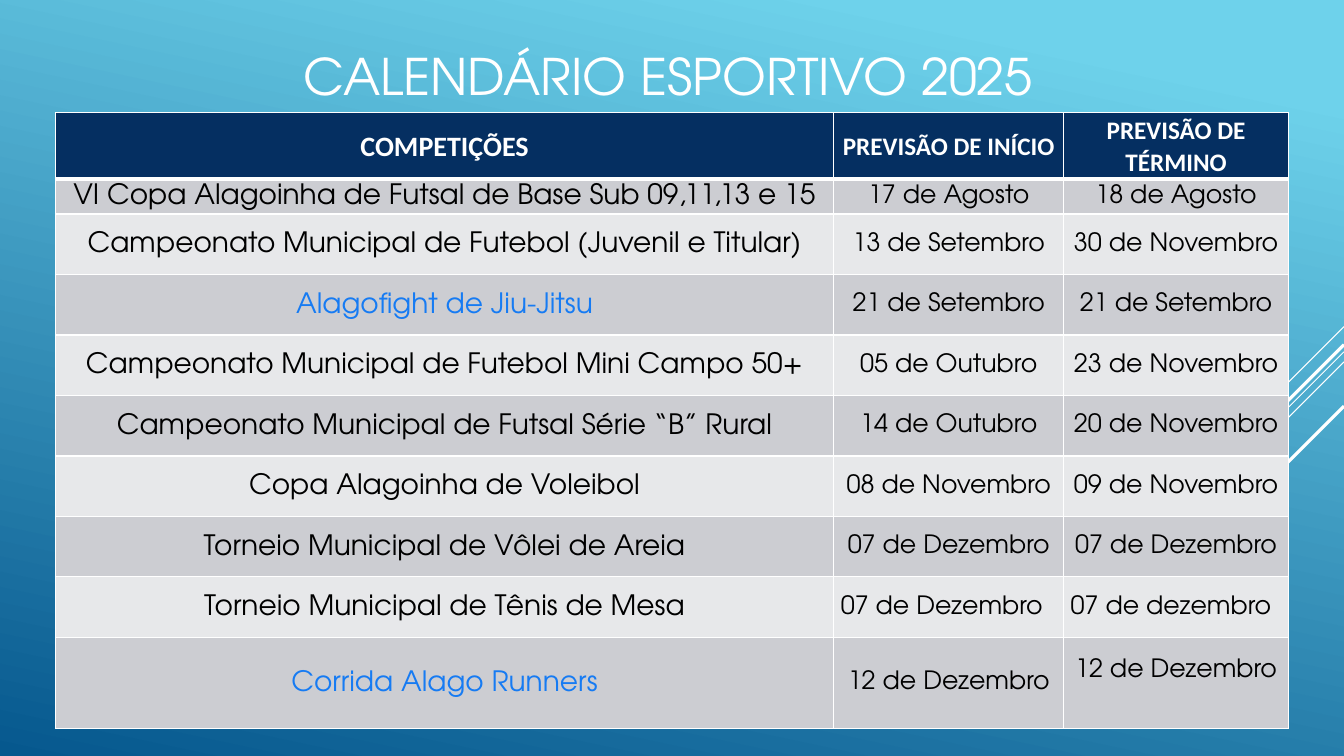
"""Build the 2025 sports calendar slide."""
import pptx
import pptx.dml.color
import pptx.enum.shapes
import pptx.enum.text
import pptx.oxml
import pptx.oxml.ns
import pptx.util
from pptx.util import Inches

COLORS = {
    "sky": "6ED2EB", "sea": "06588E", "white": "FFFFFF", "black": "000000",
    "navy": "052F61", "highlight": "167BF3", "dark_band": "CCCDD2", "light_band": "E7E8EA",
}
BODY_FONT = "TeX Gyre Adventor"
HEADER_FONT = "Calibri"
SLIDE_WIDTH = 13.33
COLUMN_WIDTHS = [7.72, 2.28, 2.23]
ROW_HEIGHTS = [0.63, 0.35] + [0.6] * 7 + [0.9]
HEADERS = ["COMPETIÇÕES", "PREVISÃO DE INÍCIO", "PREVISÃO DE TÉRMINO"]
COMPETITIONS = [
    ("VI Copa Alagoinha de Futsal de Base Sub 09,11,13 e 15", "17 de Agosto", "18 de Agosto"),
    ("Campeonato Municipal de Futebol (Juvenil e Titular)", "13 de Setembro", "30 de Novembro"),
    ("Alagofight de Jiu-Jitsu", "21 de Setembro", "21 de Setembro"),
    ("Campeonato Municipal de Futebol Mini Campo 50+", "05 de Outubro", "23 de Novembro"),
    ("Campeonato Municipal de Futsal Série “B” Rural", "14 de Outubro", "20 de Novembro"),
    ("Copa Alagoinha de Voleibol", "08 de Novembro", "09 de Novembro"),
    ("Torneio Municipal de Vôlei de Areia", "07 de Dezembro", "07 de Dezembro"),
    ("Torneio Municipal de Tênis de Mesa", "07 de Dezembro", "07 de dezembro"),
    ("Corrida Alago Runners", "12 de Dezembro", "12 de Dezembro"),
]
HIGHLIGHTED = {"Alagofight de Jiu-Jitsu", "Corrida Alago Runners"}
LEFT_DATED = "Torneio Municipal de Tênis de Mesa"
DIAGONALS = [(3.24, 1.0, 0.75), (3.49, 3.26, 0.75), (3.59, 2.07, 0.75),
             (3.42, 1.91, 2.25), (4.03, 1.39, 2.25)]


def rgb(name):
    return pptx.dml.color.RGBColor.from_string(COLORS[name])


def write(frame, text, size, color="black", font=BODY_FONT, bold=False, align="CENTER", spacing=None):
    paragraph = frame.paragraphs[0]
    paragraph.alignment = getattr(pptx.enum.text.PP_ALIGN, align)
    paragraph.line_spacing = spacing
    run = paragraph.add_run()
    run.text = text
    run.font.name = font
    run.font.size = pptx.util.Pt(size)
    run.font.bold = bold
    run.font.color.rgb = rgb(color)


def paint_background(slide):
    fill = slide.background.fill
    fill.gradient()
    fill.gradient_angle = 360 - 102
    for stop, color, position in zip(fill.gradient_stops, ("sky", "sea"), (0.1, 1.0)):
        stop.color.rgb = rgb(color)
        stop.position = position


def add_diagonal(slide, top, reach, width):
    diagonal = slide.shapes.add_connector(
        pptx.enum.shapes.MSO_CONNECTOR.STRAIGHT, Inches(SLIDE_WIDTH), Inches(top),
        Inches(SLIDE_WIDTH - reach), Inches(top + reach))
    diagonal.line.color.rgb = rgb("white")
    diagonal.line.width = pptx.util.Pt(width)
    properties = diagonal.element.spPr
    properties.append(pptx.oxml.parse_xml(f'<a:effectLst {pptx.oxml.ns.nsdecls("a")}/>'))


def add_title(slide):
    title = slide.shapes.title
    title.left, title.top, title.width, title.height = map(Inches, (0.71, 0.28, 11.83, 0.94))
    title.text_frame.vertical_anchor = pptx.enum.text.MSO_ANCHOR.MIDDLE
    write(title.text_frame, "CALENDÁRIO ESPORTIVO 2025", 36, color="white")


def format_cell(cell, fill, top=1, bottom=1):
    cell.margin_left = cell.margin_right = Inches(0.07)
    cell.margin_top = cell.margin_bottom = 0
    cell.vertical_anchor = pptx.enum.text.MSO_ANCHOR.MIDDLE
    properties = cell._tc.get_or_add_tcPr()
    for side, points in (("L", 1), ("R", 1), ("T", top), ("B", bottom)):
        properties.append(pptx.oxml.parse_xml(
            f'<a:ln{side} {pptx.oxml.ns.nsdecls("a")} w="{pptx.util.Pt(points)}"><a:solidFill>'
            f'<a:srgbClr val="{COLORS["white"]}"/></a:solidFill></a:ln{side}>'))
    cell.fill.solid()
    cell.fill.fore_color.rgb = rgb(fill)


def add_calendar(slide):
    calendar = slide.shapes.add_table(
        len(ROW_HEIGHTS), len(COLUMN_WIDTHS), Inches(0.55), Inches(1.12),
        Inches(sum(COLUMN_WIDTHS)), Inches(sum(ROW_HEIGHTS))).table
    for column, width in zip(calendar.columns, COLUMN_WIDTHS):
        column.width = Inches(width)
    for row, height in zip(calendar.rows, ROW_HEIGHTS):
        row.height = Inches(height)
    for index, header in enumerate(HEADERS):
        cell = calendar.cell(0, index)
        format_cell(cell, "navy", bottom=3)
        write(cell.text_frame, header, 18 if index else 20, color="white",
              font=HEADER_FONT, bold=True, spacing=1.07)
    for number, (competition, *dates) in enumerate(COMPETITIONS, start=1):
        for index in range(len(HEADERS)):
            format_cell(calendar.cell(number, index), "dark_band" if number % 2 else "light_band",
                        top=3 if number == 1 else 1)
        write(calendar.cell(number, 0).text_frame, competition, 20, spacing=1.07,
              color="highlight" if competition in HIGHLIGHTED else "black")
        for index, date in enumerate(dates, start=1):
            write(calendar.cell(number, index).text_frame, date, 18,
                  align="LEFT" if competition == LEFT_DATED else "CENTER")
    calendar.cell(len(COMPETITIONS), 2).margin_bottom = Inches(0.24)


def main():
    deck = pptx.Presentation()
    deck.slide_width, deck.slide_height = Inches(SLIDE_WIDTH), Inches(7.5)
    slide = deck.slides.add_slide(deck.slide_layouts[5])
    paint_background(slide)
    for diagonal in DIAGONALS:
        add_diagonal(slide, *diagonal)
    add_title(slide)
    add_calendar(slide)
    deck.save("out.pptx")


if __name__ == "__main__":
    main()
